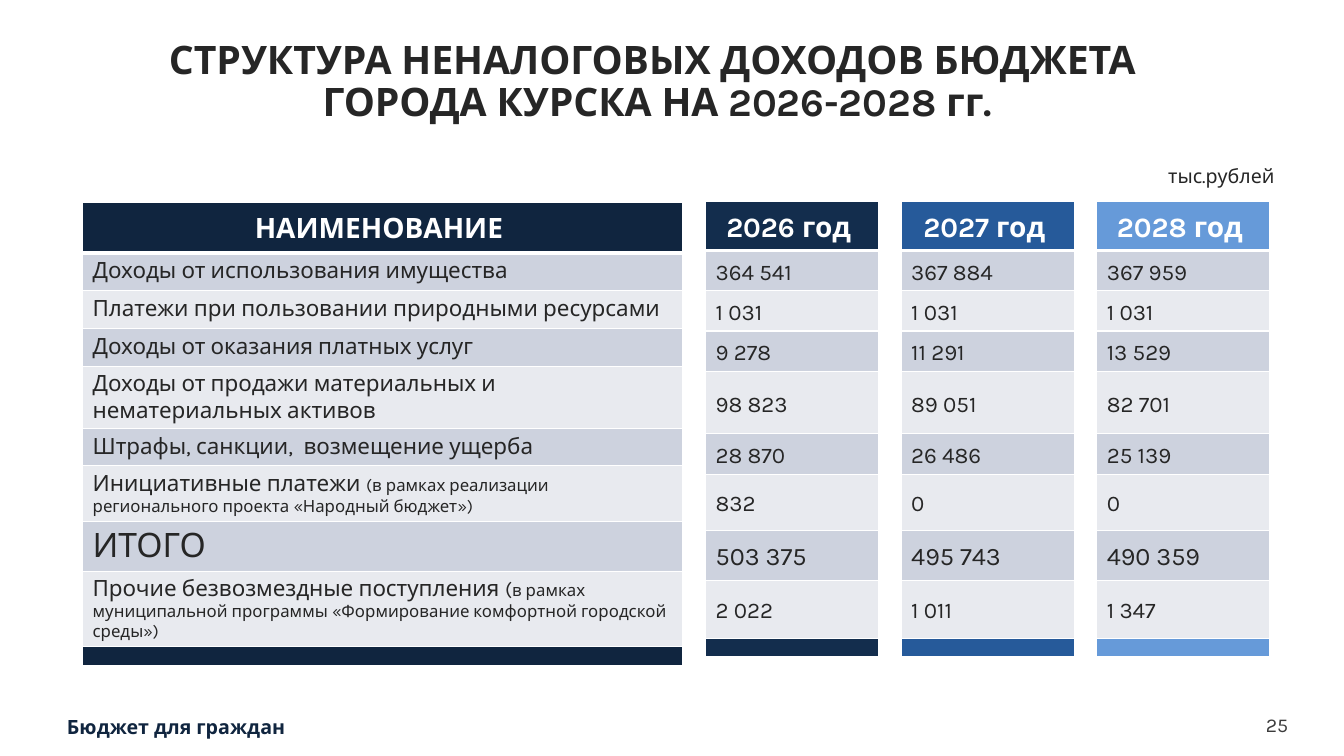
from dataclasses import dataclass
from typing import NamedTuple

from lxml.etree import SubElement
from pptx import Presentation
from pptx.dml.color import RGBColor
from pptx.enum.text import MSO_ANCHOR, MSO_AUTO_SIZE, PP_ALIGN
from pptx.oxml.ns import qn
from pptx.util import Pt

FONT = "Karla"
WHITE = RGBColor(0xFF, 0xFF, 0xFF)
INK = RGBColor(0x26, 0x26, 0x26)
GRAY = RGBColor(0x3C, 0x3C, 0x3C)
NAVY = RGBColor(0x10, 0x25, 0x3F)
DEEP = RGBColor(0x13, 0x2D, 0x4D)
BLUE = RGBColor(0x26, 0x5A, 0x9A)
SKY = RGBColor(0x66, 0x9A, 0xD9)
BANDS = (RGBColor(0xCD, 0xD2, 0xDE), RGBColor(0xE8, 0xEA, 0xEF))


class Part(NamedTuple):
    text: str
    size: float = 16


@dataclass
class Grid:
    left: float
    top: float
    width: float
    head: str
    color: RGBColor
    rows: list[list[Part]]
    tall: tuple[float, ...]
    anchor: MSO_ANCHOR = MSO_ANCHOR.MIDDLE
    space: float = 1.15
    after: float = 10


@dataclass
class Label:
    text: str
    left: float
    top: float
    width: float
    height: float
    size: float = 14
    color: RGBColor = INK
    bold: bool = False
    align: PP_ALIGN = PP_ALIGN.LEFT
    inset: tuple[float, float] = (0, 0)


def write(para, text: str, size: float = 16, color: RGBColor = INK,
          bold: bool = False, align: PP_ALIGN = PP_ALIGN.LEFT,
          space: float = 1, after: float = 0) -> None:
    para.alignment = align
    para.line_spacing = space
    para.space_before = Pt(0)
    para.space_after = Pt(after)
    for i, line in enumerate(text.split("\n")):
        if i:
            para.add_line_break()
        run = para.add_run()
        run.text = line
        font = run.font
        font.name, font.size, font.bold = FONT, Pt(size), bold
        font.color.rgb = color


def paint(cell, color: RGBColor, base: float = 1, roof: float = 1) -> None:
    props = cell._tc.get_or_add_tcPr()
    for side, wide in (("L", 1), ("R", 1), ("T", roof), ("B", base)):
        line = SubElement(props, qn(f"a:ln{side}"), w=str(Pt(wide)))
        fill = SubElement(line, qn("a:solidFill"))
        SubElement(fill, qn("a:srgbClr"), val=str(WHITE))
    cell.fill.solid()
    cell.fill.fore_color.rgb = color


def draw_grid(slide, grid: Grid) -> None:
    count = len(grid.tall)
    table = slide.shapes.add_table(
        count, 1, Pt(grid.left), Pt(grid.top),
        Pt(grid.width), Pt(sum(grid.tall))).table
    table.first_row = table.horz_banding = False
    for row, tall in zip(table.rows, grid.tall):
        row.height = Pt(tall)

    head = table.cell(0, 0)
    paint(head, grid.color, base=3)
    write(head.text_frame.paragraphs[0], grid.head, size=20, color=WHITE,
          bold=True, align=PP_ALIGN.CENTER, space=1.15, after=10)

    for i, parts in enumerate(grid.rows):
        cell = table.cell(i + 1, 0)
        paint(cell, BANDS[i % 2], roof=1 if i else 3)
        cell.vertical_anchor = grid.anchor
        for part in parts:
            write(cell.text_frame.paragraphs[0], part.text, size=part.size,
                  space=grid.space, after=grid.after)

    foot = table.cell(count - 1, 0)
    paint(foot, grid.color)
    foot.margin_top = foot.margin_bottom = 0
    SubElement(foot.text_frame.paragraphs[0]._p, qn("a:endParaRPr"), sz="600")


def draw_label(slide, label: Label) -> None:
    box = slide.shapes.add_textbox(Pt(label.left), Pt(label.top),
                                   Pt(label.width), Pt(label.height))
    frame = box.text_frame
    frame.word_wrap = True
    side, edge = label.inset
    frame.margin_left = frame.margin_right = Pt(side)
    frame.margin_top = frame.margin_bottom = Pt(edge)
    write(frame.paragraphs[0], label.text, size=label.size,
          color=label.color, bold=label.bold, align=label.align)


NAMES = [
    [Part("Доходы от использования имущества")],
    [Part("Платежи при пользовании природными ресурсами")],
    [Part("Доходы от оказания платных услуг")],
    [Part("Доходы от продажи материальных и нематериальных активов")],
    [Part("Штрафы, санкции,  возмещение ущерба")],
    [Part("Инициативные платежи "),
     Part("(в рамках реализации регионального проекта «Народный бюджет»)", 12)],
    [Part("ИТОГО", 24)],
    [Part("Прочие безвозмездные поступления "), Part("(", 14),
     Part("в рамках муниципальной программы "
          "«Формирование комфортной городской среды»)", 12)],
]
YEARS = [
    ("2026 год ", DEEP, ("364 541", "1 031", "9 278", "98 823",
                         "28 870", "832", "503 375", "2 022")),
    ("2027 год ", BLUE, ("367 884", "1 031", "11 291", "89 051",
                         "26 486", "0", "495 743", "1 011")),
    ("2028 год ", SKY, ("367 959", "1 031", "13 529", "82 701",
                        "25 139", "0", "490 359", "1 347")),
]
TOTAL = 6
NAME_TALL = (36, 27, 27, 27, 44.5, 26.5, 40, 35, 54, 13.5)
YEAR_TALL = (35, 28.5, 28.5, 29, 44.5, 29, 40, 35.5, 41.5, 13)
LABELS = [
    Label("тыс.рублей", 827.3, 113.8, 123.8, 24.5, inset=(7.2, 3.6)),
    Label("Бюджет для граждан", 47.8, 510.5, 855, 17.3, color=NAVY, bold=True),
    Label("25", 892, 509, 28.2, 17.3, color=GRAY, align=PP_ALIGN.RIGHT),
]


def main() -> None:
    deck = Presentation()
    deck.slide_width, deck.slide_height = Pt(960), Pt(540)
    slide = deck.slides.add_slide(deck.slide_layouts[5])

    title = slide.shapes.title
    title.left, title.top = Pt(41.8), Pt(31.7)
    title.width, title.height = Pt(855.4), Pt(54.7)
    frame = title.text_frame
    frame.auto_size = MSO_AUTO_SIZE.NONE
    frame.vertical_anchor = MSO_ANCHOR.MIDDLE
    write(frame.paragraphs[0],
          "СТРУКТУРА НЕНАЛОГОВЫХ ДОХОДОВ БЮДЖЕТА \n"
          "ГОРОДА КУРСКА НА 2026-2028 гг.",
          size=28, bold=True, align=PP_ALIGN.CENTER, space=0.9)

    draw_grid(slide, Grid(59, 144.7, 428.4, "НАИМЕНОВАНИЕ ", NAVY, NAMES,
                          NAME_TALL, MSO_ANCHOR.TOP, 1, 0))
    for i, (head, color, sums) in enumerate(YEARS):
        rows = [[Part(text, 18 if j == TOTAL else 16)]
                for j, text in enumerate(sums)]
        draw_grid(slide, Grid(504 + 139.7 * i, 144, 123.8, head, color,
                              rows, YEAR_TALL))
    for label in LABELS:
        draw_label(slide, label)
    deck.save("out.pptx")


if __name__ == "__main__":
    main()
